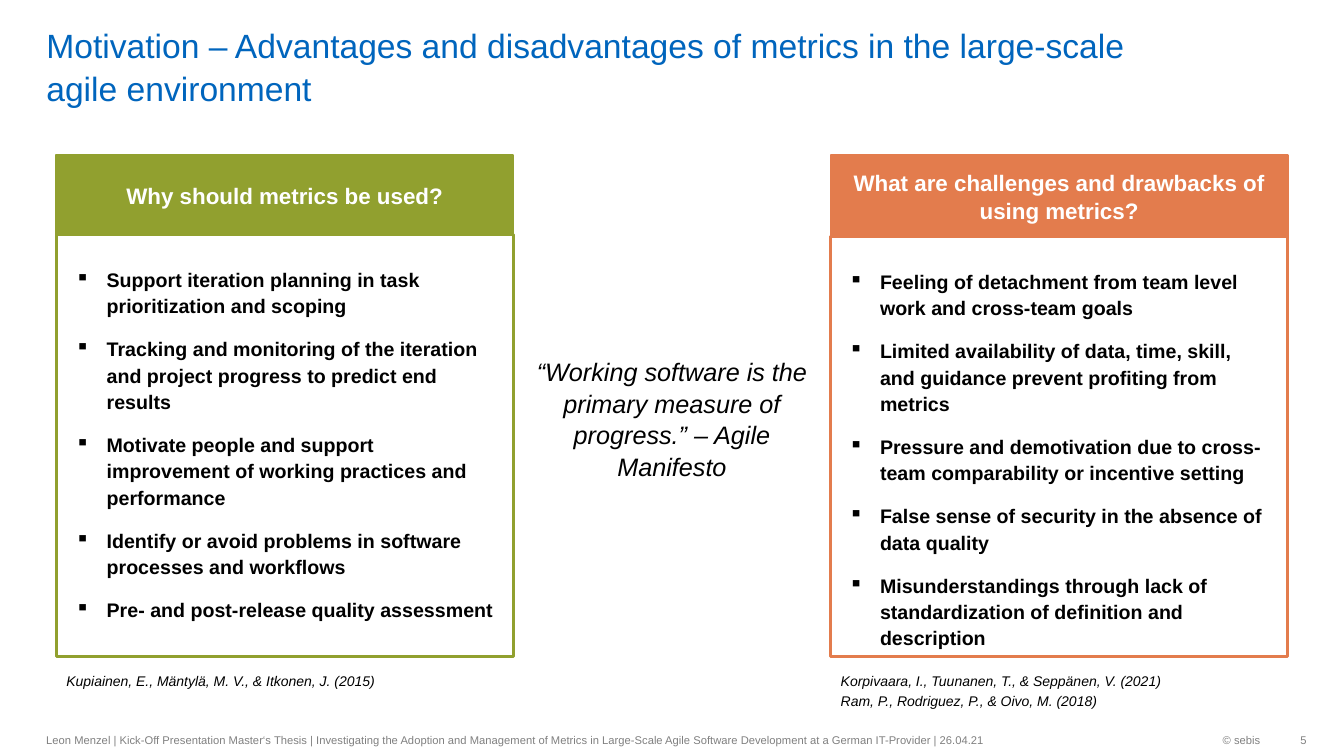
from dataclasses import dataclass

from lxml import etree
from pptx import Presentation
from pptx.dml.color import RGBColor
from pptx.enum.shapes import MSO_SHAPE
from pptx.enum.text import MSO_ANCHOR, MSO_AUTO_SIZE, PP_ALIGN
from pptx.oxml.ns import qn
from pptx.util import Inches, Pt

RECT = MSO_SHAPE.RECTANGLE
TOP, MIDDLE, BOTTOM = MSO_ANCHOR.TOP, MSO_ANCHOR.MIDDLE, MSO_ANCHOR.BOTTOM
LEFT, CENTER, RIGHT = PP_ALIGN.LEFT, PP_ALIGN.CENTER, PP_ALIGN.RIGHT
FIXED = MSO_AUTO_SIZE.NONE


@dataclass(frozen=True)
class Theme:
    font: str = "Arial"
    blue: str = "0065BD"
    green: str = "91A02F"
    orange: str = "E37C4D"
    black: str = "000000"
    white: str = "FFFFFF"
    gray: str = "808080"
    title: int = 24
    quote: int = 18
    head: int = 16
    body: int = 14
    cite: int = 10
    foot: int = 8
    leading: float = 1.05


class Page:
    def __init__(self, deck, theme):
        self.theme = theme
        self.slide = deck.slides.add_slide(deck.slide_layouts[5])

    def label(self, shape, lines, size, color, align=LEFT, anchor=TOP,
              bold=False, italic=False, after=0, leading=None, bullet=False):
        frame = shape.text_frame
        frame.word_wrap = True
        frame.auto_size = FIXED
        frame.vertical_anchor = anchor
        for i, line in enumerate(lines):
            para = frame.add_paragraph() if i else frame.paragraphs[0]
            para.text = line
            para.alignment = align
            para.space_before = Pt(0)
            para.space_after = Pt(after)
            para.line_spacing = leading or self.theme.leading
            if bullet:
                props = para._p.get_or_add_pPr()
                props.set("marL", str(Inches(0.31)))
                props.set("indent", str(-Inches(0.31)))
                etree.SubElement(props, qn("a:buChar")).set("char", "▪")
            font = para.font
            font.name = self.theme.font
            font.size = Pt(size)
            font.color.rgb = RGBColor.from_string(color)
            font.bold = bold
            font.italic = italic

    def title(self, text, x, y, w, h):
        shape = self.slide.shapes.title
        shape.left, shape.top = Inches(x), Inches(y)
        shape.width, shape.height = Inches(w), Inches(h)
        frame = shape.text_frame
        frame.margin_top = frame.margin_bottom = 0
        self.label(shape, [text], self.theme.title, self.theme.blue,
                   anchor=BOTTOM)

    def text(self, lines, x, y, w, h, size, color, **style):
        box = self.slide.shapes.add_textbox(
            Inches(x), Inches(y), Inches(w), Inches(h))
        self.label(box, lines, size, color, **style)
        return box

    def rect(self, x, y, w, h, color, width, filled=False):
        shape = self.slide.shapes.add_shape(
            RECT, Inches(x), Inches(y), Inches(w), Inches(h))
        shape.shadow.inherit = False
        tone = RGBColor.from_string(color)
        if filled:
            shape.fill.solid()
            shape.fill.fore_color.rgb = tone
        else:
            shape.fill.background()
        shape.line.color.rgb = tone
        shape.line.width = Pt(width)
        return shape

    def panel(self, x, split, color, head, points, inset, cites):
        top, base, wide = 1.54, 6.51, 4.53
        look = self.theme
        self.rect(x, split, wide, base - split, color, 2.25)
        self.text(points, x + inset, split + 0.25, 4.37, 3.68, look.body,
                  look.black, bold=True, after=12, leading=Pt(18.8),
                  bullet=True)
        bar = self.rect(x, top, wide, split - top, color, 1.5, filled=True)
        self.label(bar, [head], look.head, look.white, align=CENTER,
                   anchor=MIDDLE, bold=True)
        self.text(cites, x, 6.61, 4.31, 0.07 + 0.2 * len(cites), look.cite,
                  look.black, italic=True, after=2)

    def footer(self, text, x, w, align=LEFT):
        return self.text([text], x, 7.18, w, 0.32, self.theme.foot,
                         self.theme.gray, align=align, anchor=MIDDLE)


def main():
    deck = Presentation()
    deck.slide_width, deck.slide_height = Inches(13.33), Inches(7.5)
    theme = Theme()
    page = Page(deck, theme)

    page.title("Motivation – Advantages and disadvantages of metrics in the "
               "large-scale agile environment", 0.36, 0.28, 11.58, 0.79)
    page.panel(
        0.56, 2.33, theme.green, "Why should metrics be used?",
        ["Support iteration planning in task prioritization and scoping",
         "Tracking and monitoring of the iteration and project progress to "
         "predict end results",
         "Motivate people and support improvement of working practices and "
         "performance",
         "Identify or avoid problems in software processes and workflows",
         "Pre- and post-release quality assessment"],
        0.09, ["Kupiainen, E., Mäntylä, M. V., & Itkonen, J. (2015)"])
    page.panel(
        8.24, 2.35, theme.orange,
        "What are challenges and drawbacks of using metrics?",
        ["Feeling of detachment from team level work and cross-team goals",
         "Limited availability of data, time, skill, and guidance prevent "
         "profiting from metrics",
         "Pressure and demotivation due to cross-team comparability or "
         "incentive setting",
         "False sense of security in the absence of data quality",
         "Misunderstandings through lack of standardization of definition "
         "and description"],
        0.08, ["Korpivaara, I., Tuunanen, T., & Seppänen, V. (2021)",
               "Ram, P., Rodriguez, P., & Oivo, M. (2018)"])
    page.text(["“Working software is the primary measure of progress.” – "
               "Agile Manifesto"], 5.06, 3.47, 3.21, 1.31, theme.quote,
              theme.black, align=CENTER, italic=True)

    page.footer("Leon Menzel | Kick-Off Presentation Master‘s Thesis | "
                "Investigating the Adoption and Management of Metrics in "
                "Large-Scale Agile Software Development at a German "
                "IT-Provider | 26.04.21", 0.36, 9.9)
    page.footer("© sebis", 10.26, 2.34, RIGHT)
    number = page.footer("5", 12.6, 0.36, RIGHT)
    number.text_frame.margin_right = 0

    deck.save("out.pptx")


if __name__ == "__main__":
    main()
